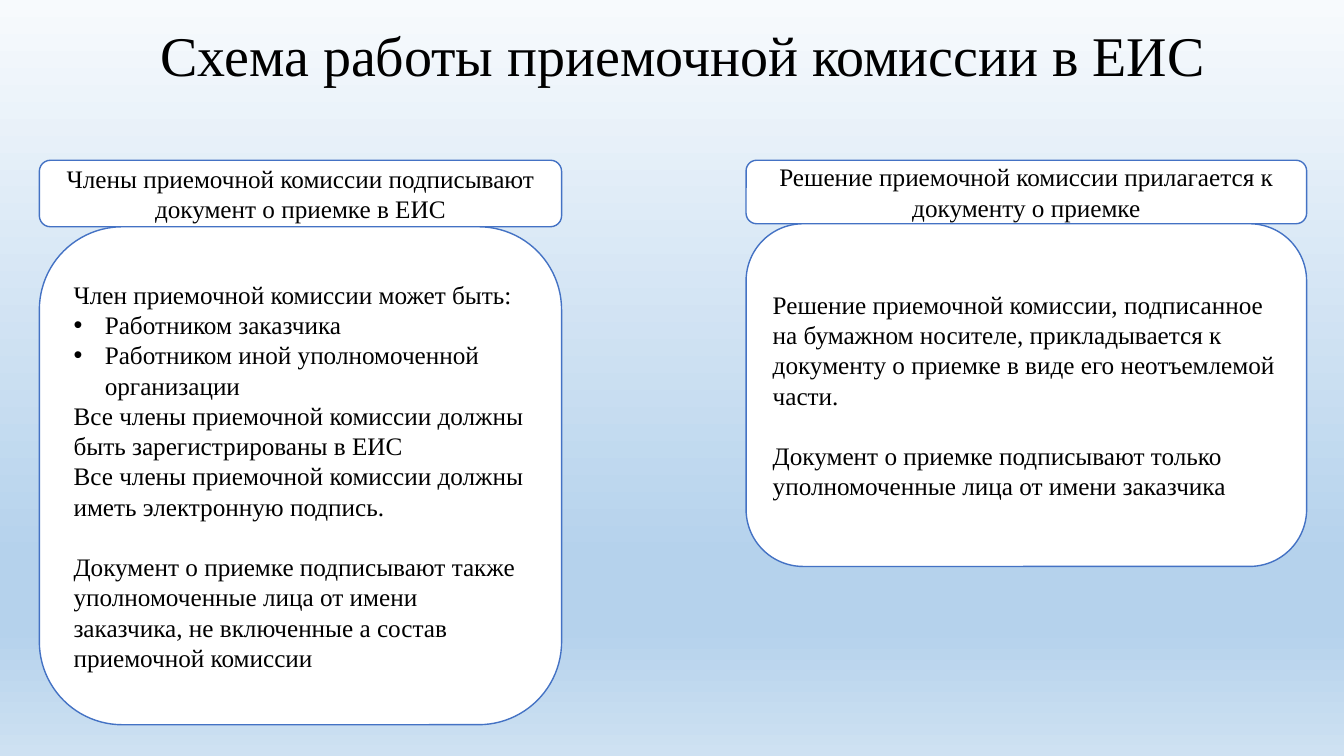
from copy import deepcopy
from dataclasses import dataclass

from lxml.etree import SubElement as Sub
from pptx import Presentation
from pptx.dml.color import RGBColor as RGB
from pptx.enum.shapes import MSO_SHAPE as Shape
from pptx.enum.text import MSO_ANCHOR as Anchor, PP_ALIGN as Align
from pptx.oxml.ns import qn
from pptx.slide import Slide
from pptx.text.text import _Paragraph as Para
from pptx.util import Inches, Pt

HUES = {"text": "000000", "fill": "FFFFFF", "line": "4472C4"}
STOPS = [(0, "F7FAFD"), (0.74, "B5D2EC"), (0.83, "B5D2EC"), (1, "CEE1F2")]
FONT = "Times New Roman"
TOP = 1.59
GAP = 21.6


@dataclass
class Line:
    """One paragraph of a box."""
    text: str
    bullet: bool = False
    gap: float = 0


@dataclass
class Column:
    """A heading box with a body box right below it."""
    left: float
    width: float
    head: float
    body: float
    title: str
    lines: list[Line]


COLUMNS = [
    Column(0.39, 5.18, 0.66, 4.94,
           "Члены приемочной комиссии подписывают документ о приемке в ЕИС", [
               Line("Член приемочной комиссии может быть:"),
               Line("Работником заказчика", bullet=True),
               Line("Работником иной уполномоченной организации", bullet=True),
               Line("Все члены приемочной комиссии должны быть зарегистрированы в ЕИС"),
               Line("Все члены приемочной комиссии должны иметь электронную подпись."),
               Line("Документ о приемке подписывают также уполномоченные лица "
                    "от имени заказчика, не включенные а состав приемочной комиссии",
                    gap=GAP),
           ]),
    Column(7.4, 5.56, 0.63, 3.4,
           "Решение приемочной комиссии прилагается к документу о приемке", [
               Line("Решение приемочной комиссии, подписанное на бумажном носителе, "
                    "прикладывается к документу о приемке в виде его неотъемлемой части."),
               Line("Документ о приемке подписывают только уполномоченные лица "
                    "от имени заказчика", gap=GAP),
           ]),
]


def paint(slide: Slide) -> None:
    """Fill the background with the vertical gradient."""
    fill = slide.background.fill
    fill.gradient()
    fill.gradient_angle = 270
    marks = next(slide.element.iter(qn("a:gsLst")))
    for _ in STOPS[len(marks):]:
        marks.append(deepcopy(marks[0]))
    for stop, (place, hue) in zip(fill.gradient_stops, STOPS):
        stop.position = place
        stop.color.rgb = RGB.from_string(hue)


def write(para: Para, text: str, size: float, align: Align) -> None:
    """Add one styled run to a paragraph."""
    para.alignment = align
    run = para.add_run()
    run.text = text
    run.font.name = FONT
    run.font.size = Pt(size)
    run.font.color.rgb = RGB.from_string(HUES["text"])


def dot(para: Para) -> None:
    """Give a paragraph a hanging bullet."""
    props = para._p.get_or_add_pPr()
    props.set("marL", str(Inches(0.31)))
    props.set("indent", str(-Inches(0.31)))
    Sub(props, qn("a:buFont"), typeface="Arial")
    Sub(props, qn("a:buChar"), char="•")


def box(slide: Slide, left: float, top: float, width: float, height: float,
        lines: list[Line], align: Align) -> None:
    """Draw a rounded box with its paragraphs."""
    shape = slide.shapes.add_shape(Shape.ROUNDED_RECTANGLE, Inches(left),
                                   Inches(top), Inches(width), Inches(height))
    shape.shadow.inherit = False
    shape.fill.solid()
    shape.fill.fore_color.rgb = RGB.from_string(HUES["fill"])
    shape.line.color.rgb = RGB.from_string(HUES["line"])
    shape.line.width = Pt(1)
    frame = shape.text_frame
    frame.word_wrap = True
    frame.vertical_anchor = Anchor.MIDDLE
    for i, line in enumerate(lines):
        para = frame.add_paragraph() if i else frame.paragraphs[0]
        write(para, line.text, 18, align)
        if line.gap:
            para.space_before = Pt(line.gap)
        if line.bullet:
            dot(para)


def head(slide: Slide) -> None:
    """Place and fill the title."""
    title = slide.shapes.title
    title.left, title.top = Inches(1.02), Inches(0.22)
    title.width, title.height = Inches(11.5), Inches(0.72)
    frame = title.text_frame
    frame.word_wrap = True
    frame.vertical_anchor = Anchor.MIDDLE
    para = frame.paragraphs[0]
    para.line_spacing = 0.9
    write(para, "Схема работы приемочной комиссии в ЕИС", 40, Align.CENTER)


def main() -> None:
    """Build and save the slide."""
    deck = Presentation()
    deck.slide_width, deck.slide_height = Inches(13.33), Inches(7.5)
    slide = deck.slides.add_slide(deck.slide_layouts.get_by_name("Title Only"))
    paint(slide)
    head(slide)
    for col in COLUMNS:
        box(slide, col.left, TOP, col.width, col.head, [Line(col.title)], Align.CENTER)
        box(slide, col.left, TOP + col.head, col.width, col.body, col.lines, Align.LEFT)
    deck.save("out.pptx")


if __name__ == "__main__":
    main()
